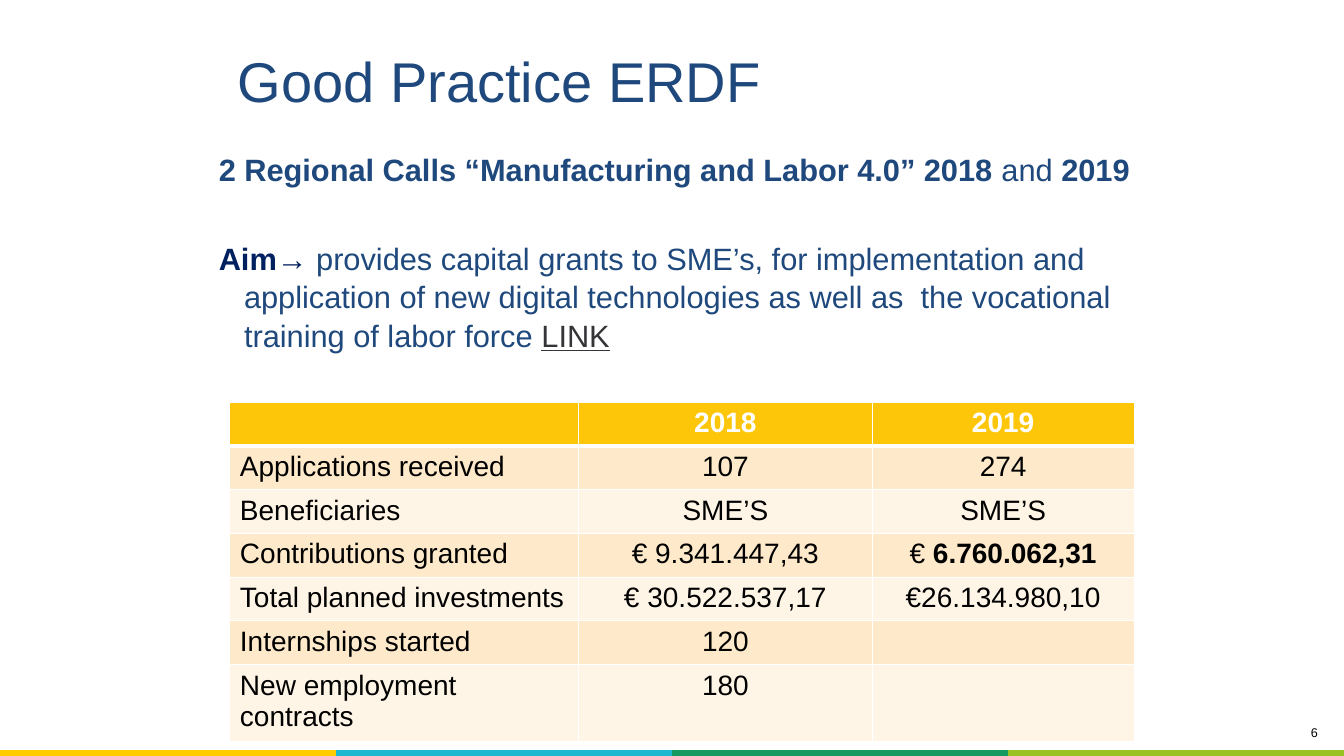
from dataclasses import dataclass

from lxml.etree import SubElement
from pptx import Presentation
from pptx.dml.color import RGBColor
from pptx.enum.text import MSO_ANCHOR, MSO_AUTO_SIZE, PP_ALIGN
from pptx.oxml.ns import qn
from pptx.util import Inches, Pt


@dataclass(frozen=True)
class Theme:
    font: str = "Arial"
    head: float = 40
    body: float = 22
    cell: float = 20
    note: float = 9
    blue: str = "1F497D"
    navy: str = "002060"
    link: str = "363438"
    black: str = "000000"
    white: str = "FFFFFF"
    gold: str = "FDC609"
    bands: tuple = ("FEEACA", "FFF5E6")
    strip: tuple = ("FFCC00", "1CB8CF", "159961", "98C222")


class Page:
    def __init__(self, deck, theme):
        self.theme = theme
        self.slide = deck.slides.add_slide(deck.slide_layouts[1])

    def place(self, shape, box):
        shape.left, shape.top, shape.width, shape.height = map(Inches, box)

    def style(self, run, size, color, bold=False, under=False):
        font = run.font
        font.name, font.size = self.theme.font, Pt(size)
        font.bold, font.underline = bold, under
        font.color.rgb = RGBColor.from_string(color)

    def title(self, text, box):
        shape = self.slide.shapes.title
        self.place(shape, box)
        frame = shape.text_frame
        frame.text = text
        frame.auto_size = MSO_AUTO_SIZE.NONE
        frame.vertical_anchor = MSO_ANCHOR.MIDDLE
        para = frame.paragraphs[0]
        para.alignment = PP_ALIGN.LEFT
        self.style(para.runs[0], self.theme.head, self.theme.blue)

    def body(self, items, box, gap):
        shape = self.slide.placeholders[1]
        self.place(shape, box)
        frame = shape.text_frame
        frame.auto_size = MSO_AUTO_SIZE.NONE
        for i, parts in enumerate(items):
            para = frame.add_paragraph() if i else frame.paragraphs[0]
            para.space_before = Pt(gap if i else 0)
            para.line_spacing = 1.04
            props = para._p.get_or_add_pPr()
            props.set("marL", str(Inches(0.5)))
            props.set("indent", str(Inches(-0.25)))
            SubElement(props, qn("a:buNone"))
            for text, *look in parts:
                run = para.add_run()
                run.text = text
                self.style(run, self.theme.body, *look)

    def label(self, text, box):
        shape = self.slide.shapes.add_textbox(*map(Inches, box))
        frame = shape.text_frame
        frame.word_wrap = True
        frame.text = text
        para = frame.paragraphs[0]
        para.alignment = PP_ALIGN.RIGHT
        self.style(para.runs[0], self.theme.note, self.theme.black)

    def grid(self, left, top, cols, rows):
        box = (left, top, sum(cols), sum(rows))
        shape = self.slide.shapes.add_table(len(rows), len(cols), *map(Inches, box))
        table = shape.table
        table.first_row = table.horz_banding = False
        for col, width in zip(table.columns, cols):
            col.width = Inches(width)
        for row, height in zip(table.rows, rows):
            row.height = Inches(height)
        return table

    def paint(self, cell, color, edge=None, base=1):
        props = cell._tc.get_or_add_tcPr()
        for side in "LRTB":
            width = base if side == "B" else 1
            line = SubElement(props, qn(f"a:ln{side}"), w=str(Pt(width)))
            if edge:
                fill = SubElement(line, qn("a:solidFill"))
                SubElement(fill, qn("a:srgbClr"), val=edge)
            else:
                SubElement(line, qn("a:noFill"))
        cell.fill.solid()
        cell.fill.fore_color.rgb = RGBColor.from_string(color)

    def strip(self, top, width, height):
        tones = self.theme.strip
        table = self.grid(0, top, [width / len(tones)] * len(tones), [height])
        for cell, tone in zip(table.rows[0].cells, tones):
            self.paint(cell, tone)

    def table(self, data, left, top, cols, rows, strong):
        theme = self.theme
        table = self.grid(left, top, cols, rows)
        for r, row in enumerate(data):
            head = r == 0
            tone = theme.gold if head else theme.bands[(r - 1) % 2]
            for c, text in enumerate(row):
                cell = table.cell(r, c)
                self.paint(cell, tone, theme.white, 3 if head else 1)
                if not text:
                    continue
                para = cell.text_frame.paragraphs[0]
                para.alignment = PP_ALIGN.CENTER if c else PP_ALIGN.LEFT
                para.text = text
                if (r, c) == strong:
                    sign, value = text.split(" ")
                    para.text = sign + " "
                    para.add_run().text = value
                color = theme.white if head else theme.black
                for i, run in enumerate(para.runs):
                    self.style(run, theme.cell, color, head or i > 0)


def main():
    deck = Presentation()
    deck.slide_width, deck.slide_height = Inches(13.33), Inches(7.5)
    theme = Theme()
    page = Page(deck, theme)
    page.strip(7.44, 13.33, 0.17)
    page.label("6", (10.55, 7.14, 2.62, 0.31))
    page.title("Good Practice ERDF", (2.26, 0.49, 9, 0.61))
    call = [
        ("2 Regional Calls “Manufacturing and Labor 4.0” 2018", theme.blue, True),
        (" and ", theme.blue),
        ("2019", theme.blue, True),
    ]
    aim = [
        ("Aim→", theme.navy, True),
        (" provides capital grants to SME’s, for implementation and "
         "application of new digital technologies as well as  the vocational "
         "training of labor force ", theme.blue),
        ("LINK", theme.link, False, True),
    ]
    page.body([call, aim], (1.82, 1.43, 9.69, 5.67), 36)
    data = [
        ("", "2018", "2019"),
        ("Applications received", "107", "274"),
        ("Beneficiaries", "SME’S", "SME’S"),
        ("Contributions granted", "€ 9.341.447,43", "€ 6.760.062,31"),
        ("Total planned investments", "€ 30.522.537,17", "€26.134.980,10"),
        ("Internships started", "120", ""),
        ("New employment contracts", "180", ""),
    ]
    page.table(data, 2.28, 3.99, [3.46, 2.91, 2.6], [0.41] * 6 + [0.71], (3, 2))
    deck.save("out.pptx")


if __name__ == "__main__":
    main()
